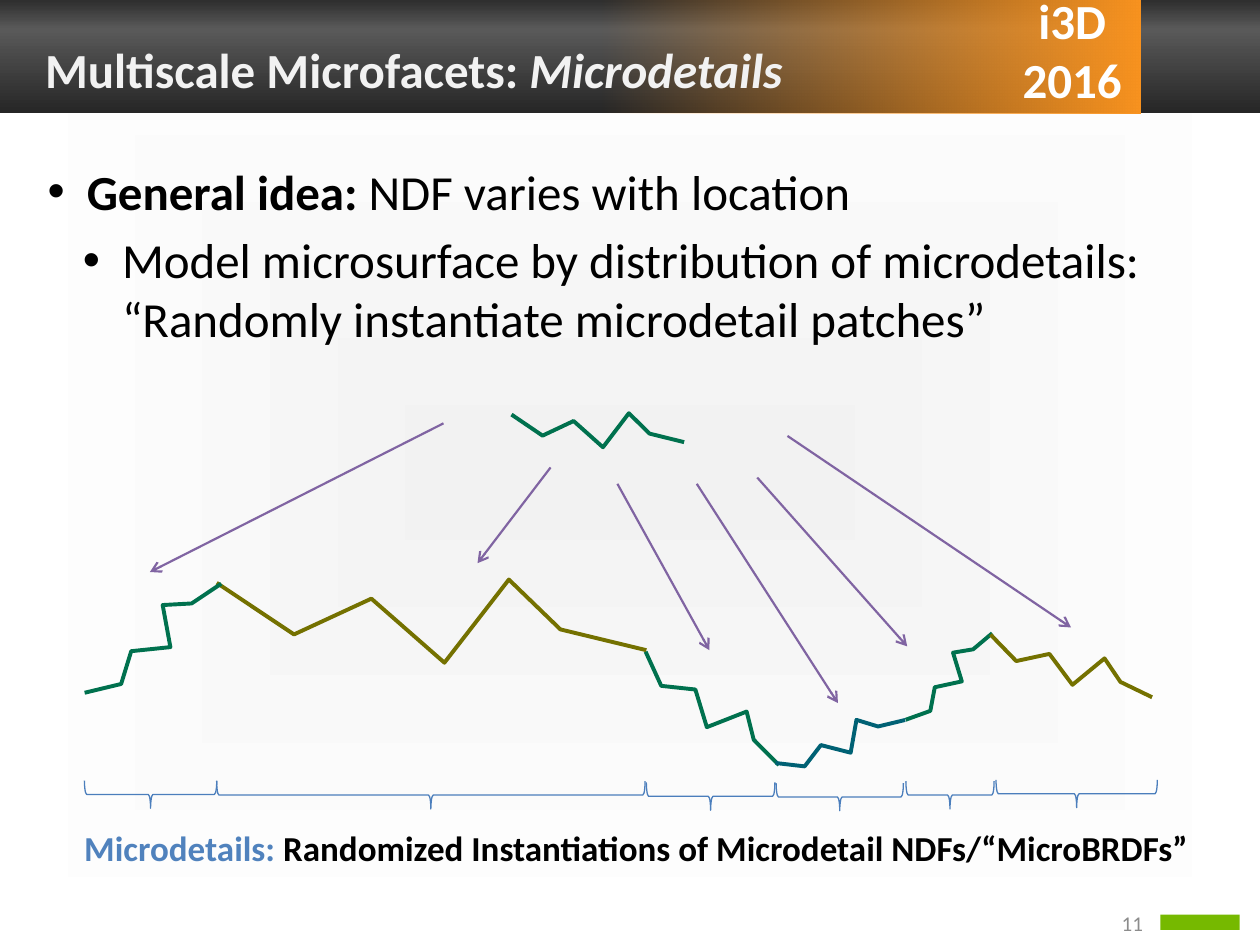
from dataclasses import dataclass

from lxml import etree
from pptx import Presentation
from pptx.dml.color import RGBColor
from pptx.enum.shapes import MSO_CONNECTOR as Connector, MSO_SHAPE as Shape
from pptx.enum.text import MSO_ANCHOR as Anchor, PP_ALIGN as Align
from pptx.oxml import parse_xml
from pptx.oxml.ns import nsdecls, qn
from pptx.util import Inches, Pt

CELL = Inches(0.1)
COLUMNS, ROWS = 100, 75
GREEN, OLIVE, TEAL = "00714E", "747100", "006174"
PURPLE, BLUE, ORANGE = "8064A2", "4B7EBC", "F9931F"
DARK_BAND = [(0, "262626", 100), (29, "595959", 100), (100, "262626", 100)]
ORANGE_FADE = [(0, ORANGE, 100), (100, ORANGE, 0)]
TITLE_FADE = [(0, "F2F2F2", 100), (100, "D9D9D9", 100)]
PAGE_GLOW = [(0, "F2F2F2", 100), (100, "FFFFFF", 100)]
CENTRE_OUT = ('<a:path path="shape"><a:fillToRect l="50000" t="50000" '
              'r="50000" b="50000"/></a:path>')

# Profile of one microdetail, as shares of its box
PROFILE = [(0, 0.04), (0.18, 0.66), (0.36, 0.23), (0.53, 1),
           (0.68, 0), (0.8, 0.6), (1, 0.85)]
# left, top, width, height, rotation, colour
PATCHES = [
    (35.6, 0.8, 13.7, 2.7, 0, GREEN),
    (12.2, 14, 34.1, 6.6, 0, OLIVE),
    (0.4, 17.4, 13.7, 2.7, 312.3, GREEN),
    (44.6, 23, 13.7, 2.7, 31.3, GREEN),
    (56.4, 25.9, 10.7, 2.1, 332.6, TEAL),
    (65.6, 20.8, 9.6, 1.9, 305.9, GREEN),
    (73.2, 19.7, 13.6, 2.6, 12.4, OLIVE),
]
# start column, start row, end column, end row
ARROWS = [
    (30.2, 1.6, 6.9, 13.4), (38.7, 5.1, 32.9, 12.7), (44, 6.4, 51.3, 19.6),
    (50.3, 6.4, 61.5, 23.8), (55.1, 5.9, 67, 19.3), (57.5, 2.6, 80, 17.8),
]
# first column, last column, middle row
BRACES = [
    (1.7, 12.2, 31.05), (12.2, 46.2, 31.1), (46.3, 56.5, 31.2),
    (56.6, 66.7, 31.25), (66.9, 73.9, 31.1), (74.05, 86.85, 31),
]
BRACE_DEPTH = 2.2


@dataclass
class Box:
    """A rectangle measured in grid cells."""
    left: float
    top: float
    width: float
    height: float

    def inside(self, left, top, width, height):
        return Box(self.left + left, self.top + top, width, height)

    def point(self, column, row):
        return round((self.left + column) * CELL), round((self.top + row) * CELL)

    def emu(self):
        return (*self.point(0, 0), round(self.width * CELL), round(self.height * CELL))


def color(value):
    return RGBColor.from_string(value)


def apply_gradient(fill, owner, stops, direction):
    fill.background()
    marks = "".join(
        f'<a:gs pos="{place * 1000}"><a:srgbClr val="{value}">'
        f'<a:alpha val="{opacity * 1000}"/></a:srgbClr></a:gs>'
        for place, value, opacity in stops)
    gradient = parse_xml(f'<a:gradFill {nsdecls("a")} rotWithShape="1">'
                         f'<a:gsLst>{marks}</a:gsLst>{direction}</a:gradFill>')
    empty = owner.find(".//" + qn("a:noFill"))
    empty.getparent().replace(empty, gradient)


def linear(degrees):
    return f'<a:lin ang="{degrees * 60000}" scaled="0"/>'


def add_plain_shape(slide, kind, box):
    shape = slide.shapes.add_shape(kind, *box.emu())
    shape.shadow.inherit = False
    return shape


def add_band(slide, box, stops, degrees):
    band = add_plain_shape(slide, Shape.RECTANGLE, box)
    apply_gradient(band.fill, band._element, stops, linear(degrees))
    band.line.fill.background()


def outline(shape, value, points):
    shape.line.color.rgb = color(value)
    shape.line.width = Pt(points)


def add_text_frame(slide, box, anchor=Anchor.TOP, wrap=True):
    frame = slide.shapes.add_textbox(*box.emu()).text_frame
    frame.word_wrap = wrap
    frame.vertical_anchor = anchor
    return frame


def add_run(paragraph, text, value, **formats):
    run = paragraph.add_run()
    run.text = text
    for name, setting in {"name": "Calibri", "size": Pt(28), **formats}.items():
        setattr(run.font, name, setting)
    run.font.color.rgb = color(value)
    return run


def indent(paragraph, margin, hanging=0, bullet=None):
    properties = paragraph._p.get_or_add_pPr()
    properties.set("marL", str(Inches(margin)))
    properties.set("indent", str(Inches(-hanging)))
    if bullet:
        etree.SubElement(properties, qn("a:buFont")).set("typeface", "Arial")
        etree.SubElement(properties, qn("a:buChar")).set("char", bullet)


def add_header(slide, box):
    add_band(slide, box, DARK_BAND, 90)
    add_band(slide, box.inside(47.6, 0, 42.9, box.height), ORANGE_FADE, 180)

    venue = add_text_frame(slide, box.inside(79.5, 0, 10.6, 9.5), Anchor.BOTTOM).paragraphs[0]
    venue.alignment = Align.CENTER
    indent(venue, 0.06)
    add_run(venue, "i3D", "FFFFFF", bold=True)
    venue.add_line_break()
    add_run(venue, "2016", "FFFFFF", bold=True)

    title = add_text_frame(slide, box.inside(2, 2.5, 96.5, 6.2), Anchor.BOTTOM).paragraphs[0]
    indent(title, 0.06)
    for text, italic in (("Multiscale Microfacets: ", False), ("Microdetails", True)):
        run = add_run(title, text, "F2F2F2", bold=True, italic=italic)
        apply_gradient(run.font.fill, run._r, TITLE_FADE, linear(90))


def add_body(slide, box):
    frame = add_text_frame(slide, box)
    idea = frame.paragraphs[0]
    indent(idea, 0.39, 0.31, "•")
    add_run(idea, "General idea:", "000000", bold=True)
    add_run(idea, " NDF varies with location", "000000")

    model = frame.add_paragraph()
    model.level = 1
    model.space_before = Pt(5.6)
    indent(model, 0.67, 0.31, "•")
    add_run(model, "Model microsurface by distribution of microdetails:", "000000")
    model.add_line_break()
    add_run(model, "“Randomly instantiate microdetail patches”", "000000")


def add_patch(slide, box, rotation, value):
    points = [box.point(x * box.width, y * box.height) for x, y in PROFILE]
    builder = slide.shapes.build_freeform(*points[0])
    builder.add_line_segments(points[1:], close=False)
    patch = builder.convert_to_shape()
    patch.shadow.inherit = False
    patch.fill.background()
    patch.rotation = rotation
    outline(patch, value, 2.25)


def add_arrow(slide, start, end):
    arrow = slide.shapes.add_connector(Connector.STRAIGHT, *start, *end)
    outline(arrow, PURPLE, 1.25)
    properties = arrow._element.spPr
    etree.SubElement(properties.find(qn("a:ln")), qn("a:tailEnd")).set("type", "arrow")
    etree.SubElement(properties, qn("a:effectLst"))


def add_brace(slide, box):
    brace = add_plain_shape(slide, Shape.LEFT_BRACE, box)
    brace.rotation = 270
    brace.fill.background()
    outline(brace, BLUE, 0.75)


def add_diagram(slide, box):
    for *place, rotation, value in PATCHES:
        add_patch(slide, box.inside(*place), rotation, value)
    for x1, y1, x2, y2 in ARROWS:
        add_arrow(slide, box.point(x1, y1), box.point(x2, y2))
    for first, last, middle in BRACES:
        span = last - first
        add_brace(slide, box.inside((first + last - BRACE_DEPTH) / 2, middle - span / 2,
                                    BRACE_DEPTH, span))

    caption = add_text_frame(slide, box.inside(0.7, 33.5, 92, 4), Anchor.MIDDLE, False).paragraphs[0]
    caption.line_spacing = 0.9
    for text, value in (
            ("Microdetails: ", "5082BD"),
            ("Randomized Instantiations of Microdetail NDFs/“MicroBRDFs”", "000000")):
        add_run(caption, text, value, size=Pt(20), bold=True)


def add_footer(slide, box):
    number = add_text_frame(slide, box.inside(0, 0, 6.6, box.height), Anchor.MIDDLE).paragraphs[0]
    number.alignment = Align.RIGHT
    add_run(number, "11", "8C8C8C", size=Pt(12))
    mark = add_plain_shape(slide, Shape.RECTANGLE, box.inside(7, 0.5, 6.3, 1.2))
    mark.fill.solid()
    mark.fill.fore_color.rgb = color("76B900")
    mark.line.fill.background()


def main():
    presentation = Presentation()
    presentation.slide_width, presentation.slide_height = COLUMNS * CELL, ROWS * CELL
    slide = presentation.slides.add_slide(presentation.slide_layouts[6])
    apply_gradient(slide.background.fill, slide._element, PAGE_GLOW, CENTRE_OUT)
    add_header(slide, Box(0, -0.4, COLUMNS, 9.4))
    add_body(slide, Box(2, 12.3, 96.5, 59.6))
    add_diagram(slide, Box(5, 32, 92.7, 37.5))
    add_footer(slide, Box(85.1, 72.1, 13.3, 2.3))
    presentation.save("out.pptx")


if __name__ == "__main__":
    main()
